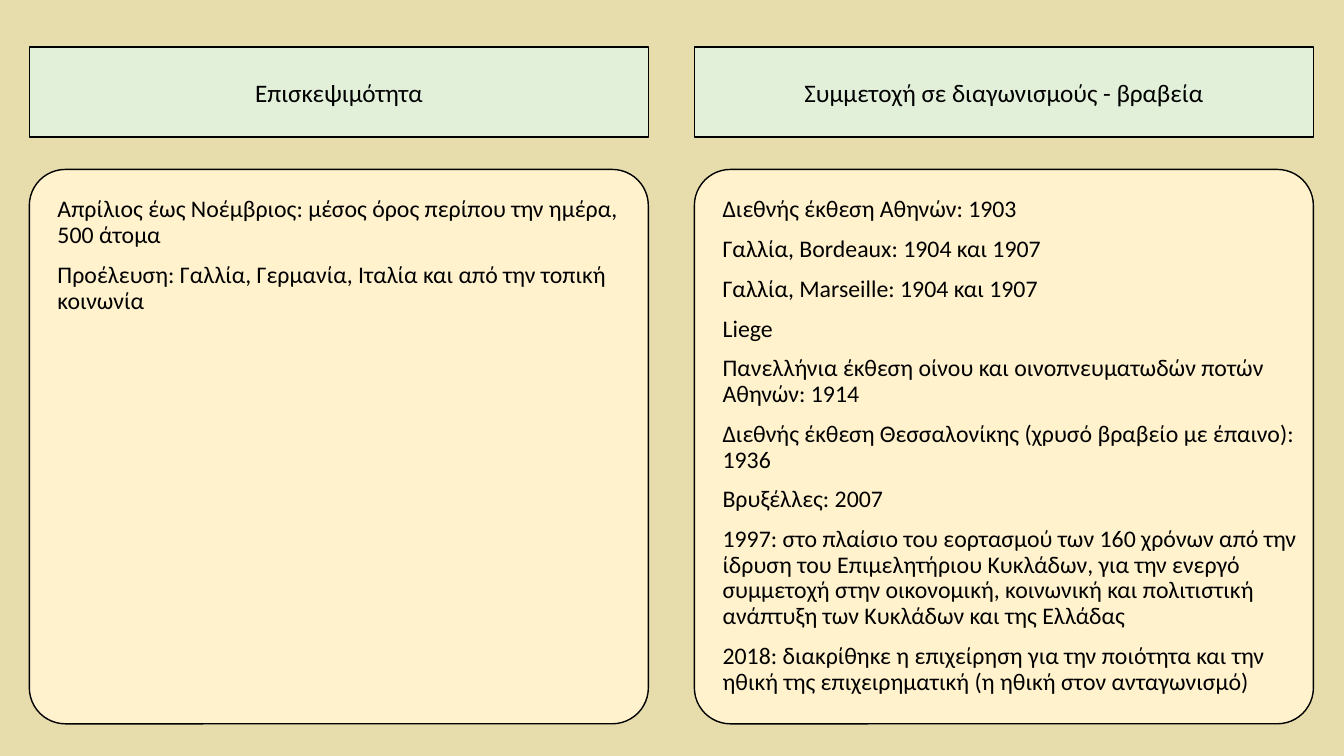
from dataclasses import dataclass

from pptx import Presentation
from pptx import util as u
from pptx.dml.color import RGBColor
from pptx.enum import shapes, text

FONT = "Calibri"
BLACK = "000000"
COLUMN_WIDTH = 15.6
FIRST_LEFT = 0.74
COLUMN_STEP = 16.76
BODY_INDENT = 0.46


@dataclass
class Column:
    heading: str
    entries: list[str]
    body_height: float


COLUMNS = [
    Column("Επισκεψιμότητα", [
        "Απρίλιος έως Νοέμβριος: μέσος όρος περίπου την ημέρα, 500 άτομα",
        "Προέλευση: Γαλλία, Γερμανία, Ιταλία και από την τοπική κοινωνία",
    ], 12.52),
    Column("Συμμετοχή σε διαγωνισμούς - βραβεία", [
        "Διεθνής έκθεση Αθηνών: 1903",
        "Γαλλία, Bordeaux: 1904 και 1907",
        "Γαλλία, Marseille: 1904 και 1907",
        "Liege",
        "Πανελλήνια έκθεση οίνου και οινοπνευματωδών ποτών Αθηνών: 1914",
        "Διεθνής έκθεση Θεσσαλονίκης (χρυσό βραβείο με έπαινο): 1936",
        "Βρυξέλλες: 2007",
        "1997: στο πλαίσιο του εορτασμού των 160 χρόνων από την ίδρυση του "
        "Επιμελητήριου Κυκλάδων, για την ενεργό συμμετοχή στην οικονομική, "
        "κοινωνική και πολιτιστική ανάπτυξη των Κυκλάδων και της Ελλάδας",
        "2018: διακρίθηκε η επιχείρηση για την ποιότητα και την ηθική της "
        "επιχειρηματική (η ηθική στον ανταγωνισμό)",
    ], 13.39),
]


def paint(fill, colour: str) -> None:
    fill.solid()
    fill.fore_color.rgb = RGBColor.from_string(colour)


def add_panel(page, kind, left: float, top: float, height: float, colour: str):
    panel = page.shapes.add_shape(
        kind, u.Cm(left), u.Cm(top), u.Cm(COLUMN_WIDTH), u.Cm(height))
    panel.shadow.inherit = False
    paint(panel.fill, colour)
    paint(panel.line.fill, BLACK)
    panel.line.width = u.Pt(1)
    return panel


def add_text(page, lines: list[str], left: float, top: float, width: float,
             height: float, *, size: float, align=text.PP_ALIGN.LEFT,
             anchor=text.MSO_ANCHOR.TOP) -> None:
    box = page.shapes.add_textbox(u.Cm(left), u.Cm(top), u.Cm(width), u.Cm(height))
    frame = box.text_frame
    frame.word_wrap = True
    frame.vertical_anchor = anchor
    for index, line in enumerate(lines):
        para = frame.add_paragraph() if index else frame.paragraphs[0]
        para.alignment = align
        para.line_spacing = 0.9
        para.space_before = u.Pt(10 if index else 0)
        span = para.add_run()
        span.text = line
        span.font.name = FONT
        span.font.size = u.Pt(size)
        span.font.color.rgb = RGBColor.from_string(BLACK)


def add_column(page, column: Column, left: float) -> None:
    # Body card
    card = add_panel(page, shapes.MSO_SHAPE.ROUNDED_RECTANGLE,
                     left, 4.27, 13.97, "FFF2CC")
    card.adjustments[0] = 0.065
    add_text(page, column.entries, left + BODY_INDENT, 4.85,
             COLUMN_WIDTH - BODY_INDENT, column.body_height, size=17)
    # Heading band
    add_panel(page, shapes.MSO_SHAPE.RECTANGLE, left, 1.19, 2.26, "E2F0D9")
    add_text(page, [column.heading], left, 1.75, COLUMN_WIDTH, 1.24, size=18,
             align=text.PP_ALIGN.CENTER, anchor=text.MSO_ANCHOR.MIDDLE)


def main() -> None:
    deck = Presentation()
    deck.slide_width, deck.slide_height = u.Cm(33.87), u.Cm(19.05)
    page = deck.slides.add_slide(deck.slide_layouts[6])
    paint(page.background.fill, "E6DCAC")
    for index, column in enumerate(COLUMNS):
        add_column(page, column, FIRST_LEFT + index * COLUMN_STEP)
    deck.save("out.pptx")


if __name__ == "__main__":
    main()
